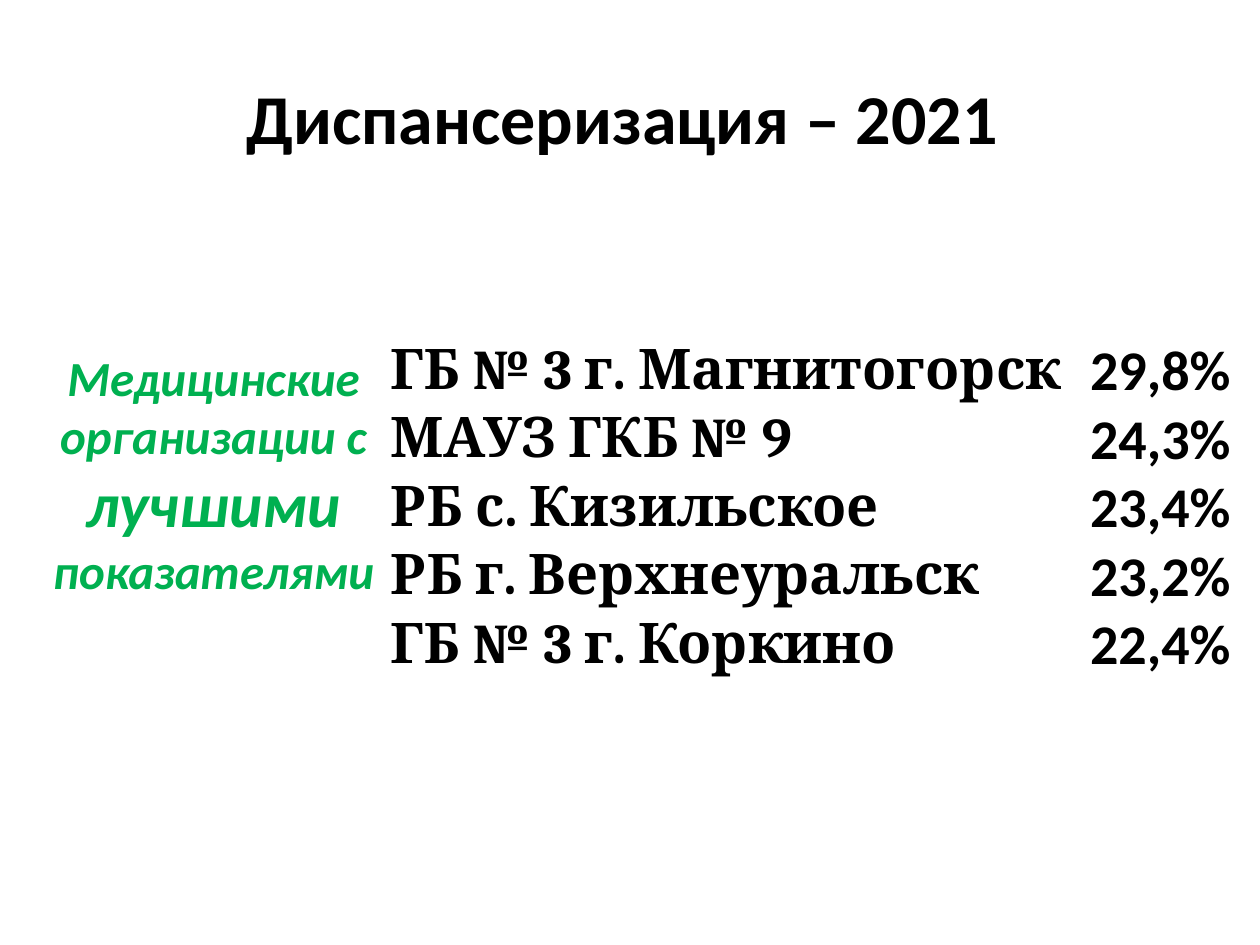
import pptx
import pptx.util
import pptx.dml.color
import pptx.enum.text
import pptx.oxml.ns
from lxml import etree

Inches = pptx.util.Inches
Align = pptx.enum.text.PP_ALIGN
Anchor = pptx.enum.text.MSO_ANCHOR

TITLE = "Диспансеризация – 2021 "
CAPTION = [
    ("Медицинские организации с ", 28),
    ("лучшими", 36),
    (" показателями", 28),
]
RESULTS = [
    ("ГБ № 3 г. Магнитогорск", "29,8%"),
    ("МАУЗ ГКБ № 9", "24,3%"),
    ("РБ с. Кизильское", "23,4%"),
    ("РБ г. Верхнеуральск", "23,2%"),
    ("ГБ № 3 г. Коркино", "22,4%"),
]
COLUMN_FORMATS = [
    {"width": 5.44, "font": "Cambria", "align": Align.LEFT, "anchor": Anchor.MIDDLE},
    {"width": 1.36, "font": "Calibri", "align": Align.CENTER, "anchor": Anchor.BOTTOM},
]
ROW_HEIGHT = 0.54
BLACK, GREEN, WHITE = "000000", "00B050", "FFFFFF"


def color(value):
    return pptx.dml.color.RGBColor.from_string(value)


def write(paragraph, text, size, font="Calibri", fill=BLACK, italic=False, align=Align.CENTER):
    paragraph.alignment = align
    run = paragraph.add_run()
    run.text = text
    run.font.size = pptx.util.Pt(size)
    run.font.name = font
    run.font.bold = True
    run.font.italic = italic
    run.font.color.rgb = color(fill)


def add_text_box(slide, left, top, width, height):
    shape = slide.shapes.add_textbox(Inches(left), Inches(top), Inches(width), Inches(height))
    shape.text_frame.word_wrap = True
    shape.text_frame.vertical_anchor = Anchor.MIDDLE
    return shape.text_frame.paragraphs[0]


def set_borders(cell, value):
    properties = cell._tc.get_or_add_tcPr()
    qn = pptx.oxml.ns.qn
    for side in ("a:lnL", "a:lnR", "a:lnT", "a:lnB"):
        line = etree.SubElement(properties, qn(side), w=str(pptx.util.Pt(1)))
        solid = etree.SubElement(line, qn("a:solidFill"))
        etree.SubElement(solid, qn("a:srgbClr"), val=value)


def add_results(slide, left, top):
    width = sum(column["width"] for column in COLUMN_FORMATS)
    table = slide.shapes.add_table(
        len(RESULTS), len(COLUMN_FORMATS), Inches(left), Inches(top),
        Inches(width), Inches(ROW_HEIGHT * len(RESULTS)),
    ).table
    table.first_row = False
    table.horz_banding = False
    for column, style in zip(table.columns, COLUMN_FORMATS):
        column.width = Inches(style["width"])
    for row, values in zip(table.rows, RESULTS):
        row.height = Inches(ROW_HEIGHT)
        for cell, text, style in zip(row.cells, values, COLUMN_FORMATS):
            cell.margin_left = cell.margin_right = cell.margin_top = Inches(0.01)
            cell.margin_bottom = 0
            cell.vertical_anchor = style["anchor"]
            set_borders(cell, WHITE)
            cell.fill.background()
            write(cell.text_frame.paragraphs[0], text, 32, font=style["font"], align=style["align"])


def main():
    presentation = pptx.Presentation()
    presentation.slide_width = Inches(10)
    presentation.slide_height = Inches(7.5)
    slide = presentation.slides.add_slide(presentation.slide_layouts[6])

    write(add_text_box(slide, 0.5, 0.3, 9, 1.25), TITLE, 40)
    caption = add_text_box(slide, 0.28, 2.1, 2.83, 3.31)
    for text, size in CAPTION:
        write(caption, text, size, fill=GREEN, italic=True)
    add_results(slide, 3.09, 2.67)
    presentation.save("out.pptx")


if __name__ == "__main__":
    main()
